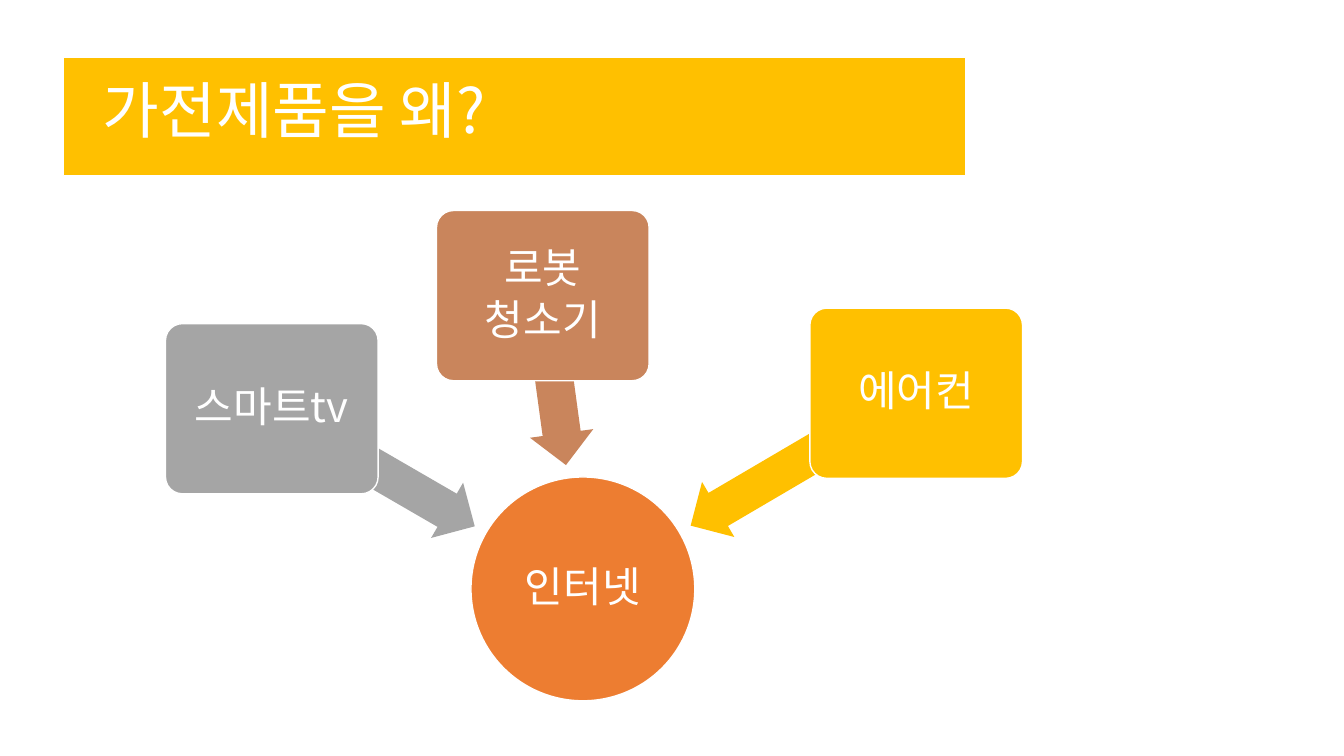
from math import atan2, cos, degrees, hypot, sin

from lxml.etree import SubElement
from pptx import Presentation
from pptx.dml.color import RGBColor
from pptx.enum.shapes import MSO_SHAPE
from pptx.enum.text import MSO_ANCHOR, PP_ALIGN
from pptx.oxml.ns import qn
from pptx.util import Cm, Pt

FONT = "Noto Sans CJK KR"
COLORS = {
    "white": "FFFFFF",
    "gold": "FFC000",
    "orange": "ED7D31",
    "gray": "A5A5A5",
    "brown": "C9855C",
}

# Centres and sizes in centimetres
HUB = (14.69, 14.84)
HUB_SIZE = 5.64
ARROW_STOP = 3.15  # from the hub centre to an arrow tip
ARROW_H = 1.61
BOX_W, BOX_H = 5.36, 4.29
DEVICES = [
    (["스마트tv"], (6.85, 10.3), "gray"),
    (["로봇", "청소기"], (13.68, 7.45), "brown"),
    (["에어컨"], (23.09, 9.91), "gold"),
]


def color(name):
    return RGBColor.from_string(COLORS[name])


def add_block(s, kind, left, top, width, height, fill, outlined=True):
    sp = s.shapes.add_shape(kind, Cm(left), Cm(top), Cm(width), Cm(height))
    sp.shadow.inherit = False
    sp.fill.solid()
    sp.fill.fore_color.rgb = color(fill)
    if outlined:
        sp.line.color.rgb = color("white")
        sp.line.width = Pt(1)
    else:
        sp.line.fill.background()
    return sp


def add_centered(s, kind, center, width, height, fill, outlined=True):
    """Add a block placed by its centre point."""
    x, y = center
    return add_block(s, kind, x - width / 2, y - height / 2,
                     width, height, fill, outlined)


def write(sp, lines, size, margin, align=PP_ALIGN.CENTER, after=4.5):
    tf = sp.text_frame
    frame = {"word_wrap": True, "vertical_anchor": MSO_ANCHOR.MIDDLE}
    frame.update({f"margin_{side}": Cm(margin)
                  for side in ("left", "top", "right", "bottom")})
    for name, value in frame.items():
        setattr(tf, name, value)
    paragraph = {"alignment": align, "line_spacing": 0.9, "space_after": Pt(after)}
    for i, line in enumerate(lines):
        p = tf.paragraphs[0] if i == 0 else tf.add_paragraph()
        for name, value in paragraph.items():
            setattr(p, name, value)
        r = p.add_run()
        r.text = line
        r.font.size = Pt(size)
        r.font.color.rgb = color("white")
        r.font.name = FONT
        SubElement(r.font._element, qn("a:ea"), typeface=FONT)


def add_title(s):
    add_block(s, MSO_SHAPE.RECTANGLE, 1.6, 1.45, 22.73, 2.97, "gold")
    sp = s.shapes.add_textbox(Cm(2.34), Cm(1.02), Cm(29.21), Cm(3.68))
    write(sp, ["가전제품을 왜?"], 44, 0.25, PP_ALIGN.LEFT, 0)


def add_hub(s):
    sp = add_centered(s, MSO_SHAPE.OVAL, HUB, HUB_SIZE, HUB_SIZE, "orange")
    write(sp, ["인터넷"], 30, 0.05)


def add_arrow_to_hub(s, start, fill):
    dx, dy = HUB[0] - start[0], HUB[1] - start[1]
    length = hypot(dx, dy) - ARROW_STOP
    angle = atan2(dy, dx)
    middle = (start[0] + cos(angle) * length / 2,
              start[1] + sin(angle) * length / 2)
    sp = add_centered(s, MSO_SHAPE.LEFT_ARROW, middle, length, ARROW_H, fill, False)
    sp.adjustments[0], sp.adjustments[1] = 0.6, 0.5
    sp.rotation = degrees(angle) + 180


def add_device(s, lines, center, fill):
    add_arrow_to_hub(s, center, fill)
    sp = add_centered(s, MSO_SHAPE.ROUNDED_RECTANGLE, center, BOX_W, BOX_H, fill)
    sp.adjustments[0] = 0.1
    write(sp, lines, 30, 0.15)


def main():
    prs = Presentation()
    prs.slide_width, prs.slide_height = Cm(33.87), Cm(19.05)
    s = prs.slides.add_slide(prs.slide_layouts[6])
    add_title(s)
    add_hub(s)
    for lines, center, fill in DEVICES:
        add_device(s, lines, center, fill)
    prs.save("out.pptx")


if __name__ == "__main__":
    main()
